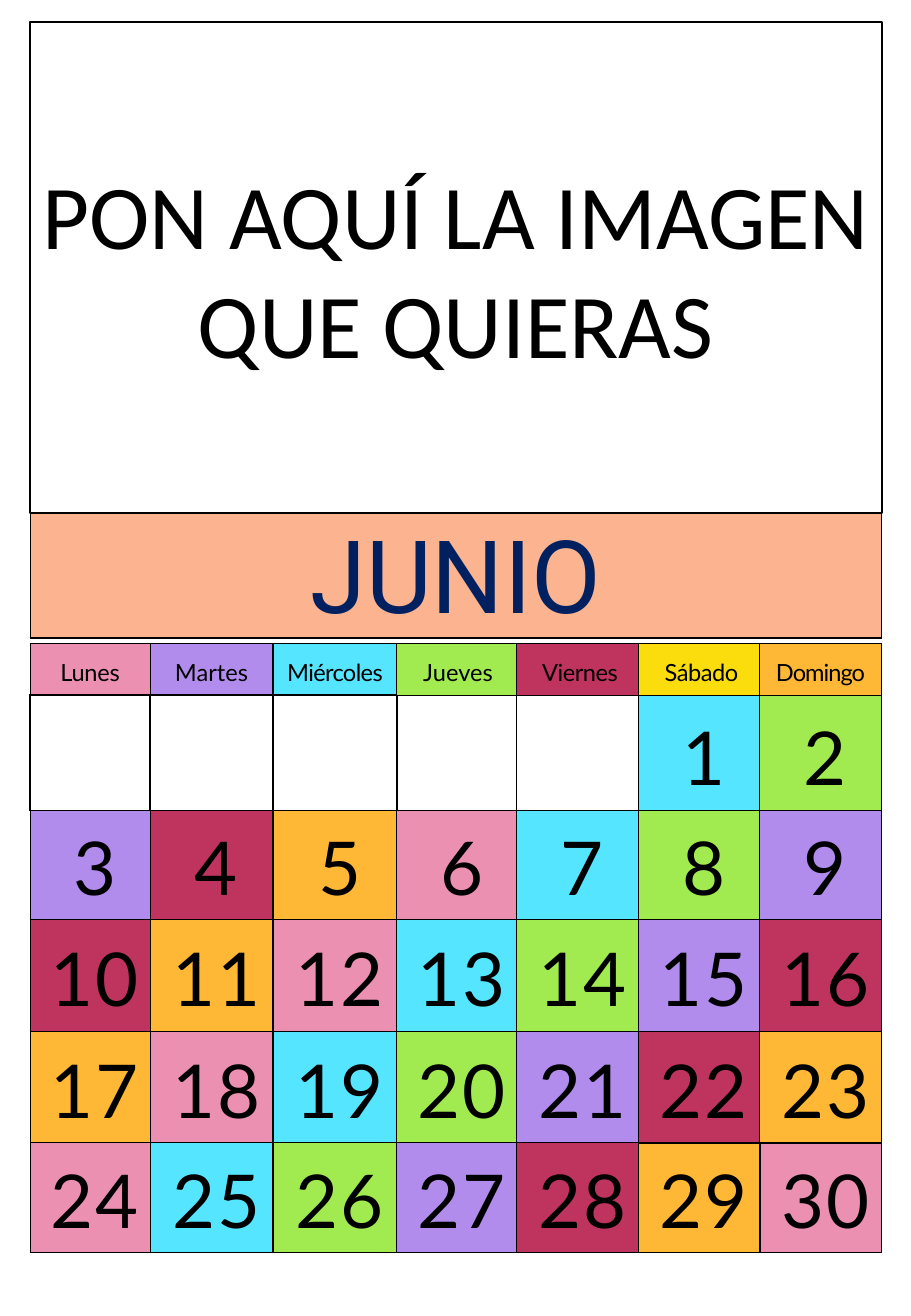
import dataclasses

import lxml.etree
import pptx
import pptx.dml.color
import pptx.enum.shapes
import pptx.enum.text
import pptx.oxml.ns
import pptx.util

Cm = pptx.util.Cm
Pt = pptx.util.Pt
qn = pptx.oxml.ns.qn


@dataclasses.dataclass(frozen=True)
class Theme:
    black: str = "000000"
    white: str = "FFFFFF"
    navy: str = "002060"
    peach: str = "FBB390"
    pink: str = "EB90B0"
    purple: str = "B18CEC"
    cyan: str = "55E5FF"
    green: str = "A1EB51"
    crimson: str = "BE345E"
    yellow: str = "FBDD0D"
    orange: str = "FFB836"
    month_size: float = 60
    frame_size: float = 54
    day_size: float = 44
    weekday_size: float = 14
    thin_line: float = 0.75
    thick_line: float = 1


theme = Theme()


def write(text_frame, text, font, size, color=theme.black, before=0, indent=0, tracking=0):
    paragraph = text_frame.paragraphs[0]
    paragraph.alignment = pptx.enum.text.PP_ALIGN.CENTER
    paragraph.space_before = Pt(before)
    paragraph._p.get_or_add_pPr().set("marL", str(Cm(indent)))
    run = paragraph.add_run()
    run.text = text
    run.font.name = font
    run.font.size = Pt(size)
    run.font.bold = False
    run.font.color.rgb = pptx.dml.color.RGBColor.from_string(color)
    run._r.get_or_add_rPr().set("spc", str(round(tracking * 100)))


def format_cell(cell, fill, top_margin, borders):
    cell.vertical_anchor = pptx.enum.text.MSO_ANCHOR.MIDDLE
    cell.margin_left = cell.margin_right = cell.margin_bottom = 0
    cell.margin_top = Cm(top_margin)
    properties = cell._tc.get_or_add_tcPr()
    for side, width in zip("LRTB", borders):
        line = lxml.etree.SubElement(properties, qn(f"a:ln{side}"), w=str(Pt(width)))
        line_fill = lxml.etree.SubElement(line, qn("a:solidFill"))
        lxml.etree.SubElement(line_fill, qn("a:srgbClr"), val=theme.black)
    cell.fill.solid()
    cell.fill.fore_color.rgb = pptx.dml.color.RGBColor.from_string(fill)


# Slide
presentation = pptx.Presentation()
presentation.slide_width = Cm(19.05)
presentation.slide_height = Cm(27.51)
slide = presentation.slides.add_slide(presentation.slide_layouts[6])
left, width = 0.63, 17.81

# Month band
month_table = slide.shapes.add_table(1, 1, Cm(left), Cm(10.72), Cm(width), Cm(2.62)).table
month_table.first_row = month_table.horz_banding = False
month_cell = month_table.cell(0, 0)
format_cell(month_cell, theme.peach, 0.13,
            [theme.thin_line, theme.thin_line, theme.thin_line, theme.thick_line])
write(month_cell.text_frame, "JUNIO", font="Roboto", size=theme.month_size,
      color=theme.navy, before=4.2)

# Calendar grid
column_widths = [2.51, 2.57, 2.59, 2.51, 2.54, 2.54, 2.54]
row_heights = [1.07, 2.41, 2.29, 2.33, 2.33, 2.29]
top_margins = [0.13, 0.15, 0.05, 0.1, 0.1, 0.1]
calendar = slide.shapes.add_table(
    len(row_heights), len(column_widths), Cm(left), Cm(13.46), Cm(width),
    Cm(sum(row_heights))).table
calendar.first_row = calendar.horz_banding = False
for column, column_width in zip(calendar.columns, column_widths):
    column.width = Cm(column_width)
for row, row_height in zip(calendar.rows, row_heights):
    row.height = Cm(row_height)

# Weekdays: name, fill, indent, tracking
weekdays = [
    ("Lunes", theme.pink, 0, -0.2),
    ("Martes", theme.purple, 0, 0),
    ("Miércoles", theme.cyan, 0, -0.4),
    ("Jueves", theme.green, 0.05, 0),
    ("Viernes", theme.crimson, 0.1, -0.3),
    ("Sábado", theme.yellow, 0.1, -0.3),
    ("Domingo", theme.orange, 0, -0.6),
]
day_colors = [theme.cyan, theme.green, theme.purple, theme.crimson, theme.orange, theme.pink]
first_weekday = 5
thick_cells = {(1, 0), (1, 1), (1, 2), (5, 5), (5, 6)}

for row in range(len(row_heights)):
    for column in range(len(column_widths)):
        cell = calendar.cell(row, column)
        neighbours = [(row, column - 1), (row, column + 1), (row - 1, column), (row + 1, column)]
        borders = [theme.thick_line if thick_cells & {(row, column), neighbour}
                   else theme.thin_line for neighbour in neighbours]
        day = (row - 1) * 7 + column - first_weekday + 1
        if row == 0:
            name, fill, indent, tracking = weekdays[column]
            write(cell.text_frame, name, font="Lato", size=theme.weekday_size,
                  before=4.2, indent=indent, tracking=tracking)
        elif day >= 1:
            fill = day_colors[(day - 1) % len(day_colors)]
            write(cell.text_frame, str(day), font="Lato", size=theme.day_size,
                  before=4.8, indent=0.2, tracking=1)
        else:
            fill = theme.white
        format_cell(cell, fill, top_margins[row], borders)

# Picture frame
frame = slide.shapes.add_shape(pptx.enum.shapes.MSO_SHAPE.RECTANGLE,
                               Cm(left), Cm(0.46), Cm(width), Cm(10.26))
frame.shadow.inherit = False
frame.fill.solid()
frame.fill.fore_color.rgb = pptx.dml.color.RGBColor.from_string(theme.white)
frame.line.color.rgb = pptx.dml.color.RGBColor.from_string(theme.black)
frame.line.width = Pt(theme.thick_line)
frame.text_frame.word_wrap = True
frame.text_frame.vertical_anchor = pptx.enum.text.MSO_ANCHOR.MIDDLE
write(frame.text_frame, "PON AQUÍ LA IMAGEN QUE QUIERAS", font="Calibri",
      size=theme.frame_size)

presentation.save("out.pptx")
